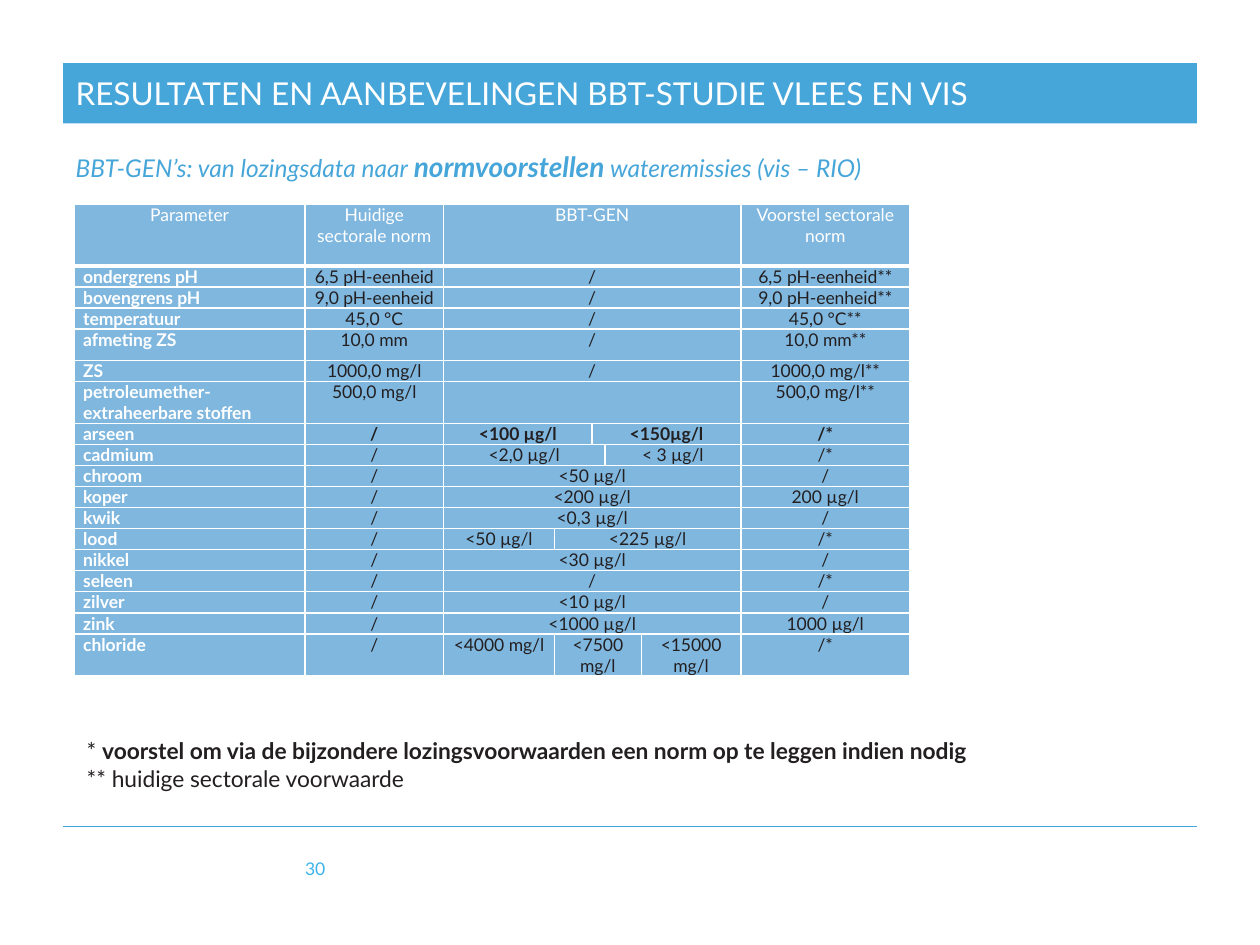
from lxml.etree import SubElement
from pptx import Presentation
from pptx.dml.color import RGBColor
from pptx.enum.shapes import MSO_CONNECTOR
from pptx.enum.text import MSO_ANCHOR, MSO_AUTO_SIZE, PP_ALIGN
from pptx.oxml.ns import qn
from pptx.util import Inches, Pt

BLUE = RGBColor(0x47, 0xA6, 0xD9)
SKY = RGBColor(0x3B, 0xB4, 0xEB)
NAVY = RGBColor(0x00, 0x70, 0xC0)
INK = RGBColor(0x23, 0x1F, 0x20)
WHITE = RGBColor(0xFF, 0xFF, 0xFF)

COLS = [1.83, 1.1, 0.88, 0.3, 0.1, 0.29, 0.79, 1.34]
HEAD = ("Parameter", "Huidige sectorale norm", "BBT-GEN", "Voorstel sectorale norm")
ROWS = [
    ("ondergrens pH", "6,5 pH-eenheid", "/", "6,5 pH-eenheid**"),
    ("bovengrens pH", "9,0 pH-eenheid", "/", "9,0 pH-eenheid**"),
    ("temperatuur", "45,0 °C", "/", "45,0 °C**"),
    ("afmeting ZS", "10,0 mm", "/", "10,0 mm**"),
    ("ZS", "1000,0 mg/l", "/", "1000,0 mg/l**"),
    ("petroleumether- extraheerbare stoffen", "500,0 mg/l", "", "500,0 mg/l**"),
    ("arseen", "/", [("<100 µg/l", 2), ("<150µg/l", 3)], "/*"),
    ("cadmium", "/", [("<2,0 µg/l", 3), ("< 3 µg/l", 2)], "/*"),
    ("chroom", "/", "<50 µg/l", "/"),
    ("koper", "/", "<200 µg/l", "200 µg/l"),
    ("kwik", "/", "<0,3 µg/l", "/"),
    ("lood", "/", [("<50 µg/l", 1), ("<225 µg/l", 4)], "/*"),
    ("nikkel", "/", "<30 µg/l", "/"),
    ("seleen", "/", "/", "/*"),
    ("zilver", "/", "<10 µg/l", "/"),
    ("zink", "/", "<1000 µg/l", "1000 µg/l"),
    ("chloride", "/", [("<4000 mg/l", 1), ("<7500 mg/l", 3), ("<15000 mg/l", 1)], "/*"),
]
HIGH = {"Parameter": 0.49, "afmeting ZS": 0.25}


def write(para, text, size=10, color=INK, bold=False, italic=False, font="Lato"):
    run = para.add_run()
    run.text = text
    run.font.name = font
    run.font.size = Pt(size)
    run.font.bold = bold
    run.font.italic = italic
    run.font.color.rgb = color


class Page:
    def __init__(self, deck):
        self.slide = deck.slides.add_slide(deck.slide_layouts[1])
        self.shapes = self.slide.shapes

    def place(self, shape, left, top, width, height):
        shape.left, shape.top = Inches(left), Inches(top)
        shape.width, shape.height = Inches(width), Inches(height)
        frame = shape.text_frame
        frame.word_wrap = True
        frame.auto_size = MSO_AUTO_SIZE.NONE
        return frame

    def title(self, text, *box):
        shape = self.shapes.title
        shape.fill.solid()
        shape.fill.fore_color.rgb = BLUE
        frame = self.place(shape, *box)
        frame.vertical_anchor = MSO_ANCHOR.MIDDLE
        para = frame.paragraphs[0]
        para.alignment = PP_ALIGN.LEFT
        write(para, text, size=18, color=WHITE)

    def body(self, parts, *box):
        para = self.place(self.slide.placeholders[1], *box).paragraphs[0]
        props = para._p.get_or_add_pPr()
        props.set("marL", "0")
        props.set("indent", "0")
        SubElement(props, qn("a:buNone"))
        para.space_before = Pt(0)
        for text, size, bold in parts:
            write(para, text, size=size, color=BLUE, bold=bold, italic=True)

    def text(self, lines, *box, align=PP_ALIGN.LEFT, anchor=MSO_ANCHOR.TOP, **style):
        frame = self.place(self.shapes.add_textbox(0, 0, 0, 0), *box)
        frame.vertical_anchor = anchor
        for i, line in enumerate(lines):
            para = frame.add_paragraph() if i else frame.paragraphs[0]
            para.alignment = align
            for text, bold in line:
                write(para, text, bold=bold, **style)

    def rule(self, left, top, right):
        line = self.shapes.add_connector(
            MSO_CONNECTOR.STRAIGHT, Inches(left), Inches(top), Inches(right), Inches(top))
        line.line.color.rgb = BLUE
        line.line.width = Pt(0.5)
        SubElement(line._element.spPr, qn("a:effectLst"))

    def paint(self, cell, head):
        props = cell._tc.get_or_add_tcPr()
        for side in "LRTB":
            width = Pt(3 if head and side == "B" else 1)
            edge = SubElement(props, qn(f"a:ln{side}"), w=str(width))
            fill = SubElement(edge, qn("a:solidFill"))
            SubElement(fill, qn("a:srgbClr"), val=str(WHITE))
        cell.fill.solid()
        cell.fill.fore_color.rgb = NAVY
        tint = props.find(qn("a:solidFill")).find(qn("a:srgbClr"))
        SubElement(tint, qn("a:alpha"), val="50000")
        cell.margin_left = cell.margin_right = Inches(0.05 if head else 0.07)
        cell.margin_top = cell.margin_bottom = 0

    def table(self, left, top, cols, rows):
        frame = self.shapes.add_table(
            len(rows), len(cols), Inches(left), Inches(top), Inches(sum(cols)), Inches(3.1))
        grid = frame.table
        grid.first_row = grid.horz_banding = False
        for col, width in zip(grid.columns, cols):
            col.width = Inches(width)
        for r, (name, now, mid, goal) in enumerate(rows):
            grid.rows[r].height = Inches(HIGH.get(name, 0.15))
            parts = mid if isinstance(mid, list) else [(mid, 5)]
            c = 0
            for text, span in [(name, 1), (now, 1), *parts, (goal, 1)]:
                cell = grid.cell(r, c)
                for step in range(span):
                    self.paint(grid.cell(r, c + step), r == 0)
                if span > 1:
                    cell.merge(grid.cell(r, c + span - 1))
                label = r > 0 and c == 0
                para = cell.text_frame.paragraphs[0]
                para.alignment = PP_ALIGN.JUSTIFY if label else PP_ALIGN.CENTER
                if text:
                    write(para, text, color=WHITE if label or r == 0 else INK,
                          bold=label or name == "arseen")
                c += span


def main():
    deck = Presentation()
    deck.slide_width, deck.slide_height = Inches(10), Inches(7.5)
    page = Page(deck)
    page.rule(0.5, 6.56, 9.5)
    page.title("RESULTATEN EN AANBEVELINGEN BBT-STUDIE VLEES EN VIS", 0.5, 0.5, 9, 0.48)
    page.body([("BBT-GEN’s: van lozingsdata naar ", 14, False),
               ("normvoorstellen", 16, True),
               (" wateremissies (vis – RIO)", 14, False)], 0.5, 1.14, 9, 0.78)
    page.text([[("30", False)]], 1.99, 6.69, 0.69, 0.4,
              align=PP_ALIGN.RIGHT, anchor=MSO_ANCHOR.MIDDLE, color=SKY)
    page.table(0.59, 1.62, COLS, [HEAD, *ROWS])
    page.text([[("* ", False),
                ("voorstel om via de bijzondere lozingsvoorwaarden een norm op te leggen"
                 " indien nodig", True)],
               [("** huidige sectorale voorwaarde", False)]],
              0.59, 5.8, 7.87, 0.74, size=13)
    deck.save("out.pptx")


if __name__ == "__main__":
    main()
